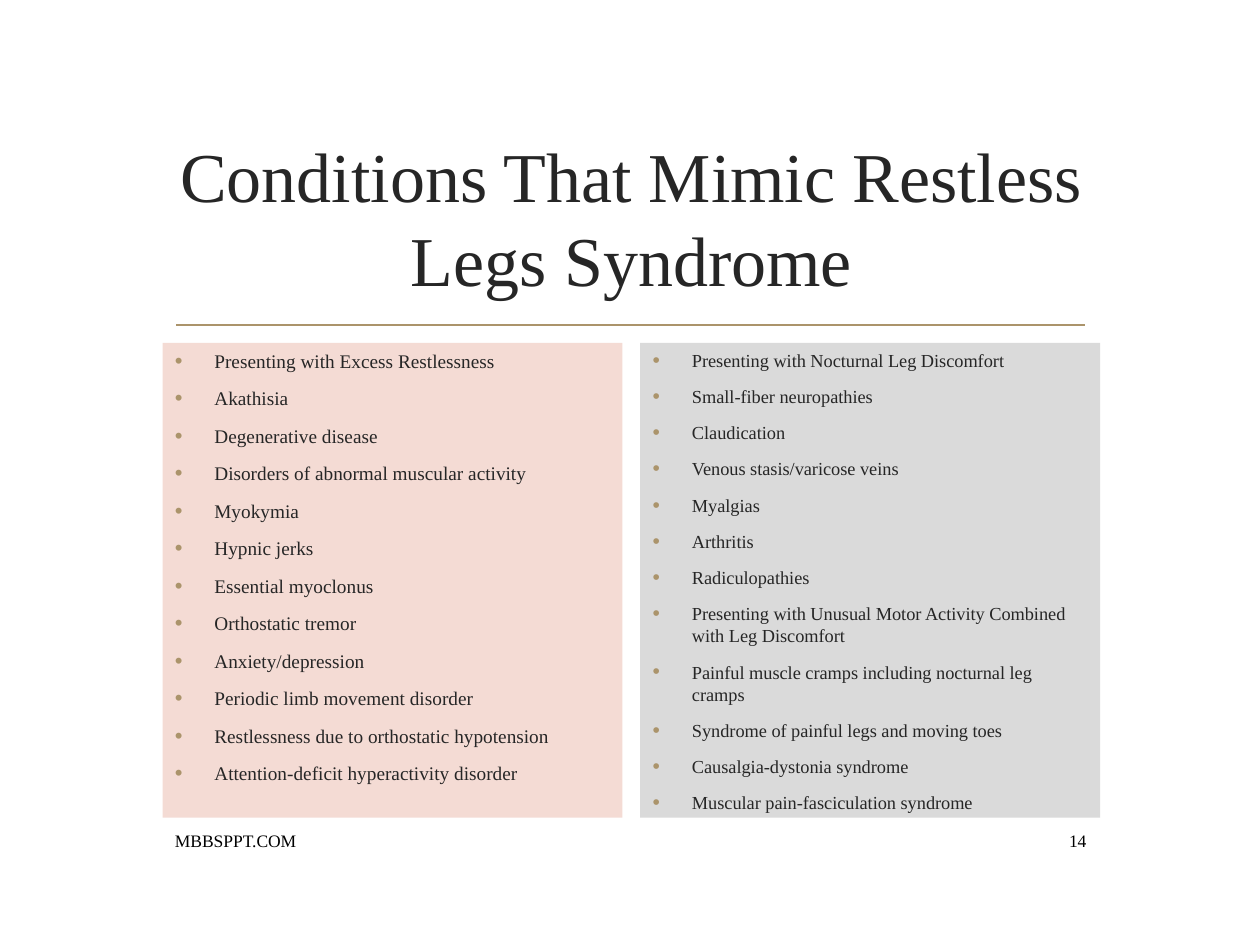
from lxml import etree
from pptx import Presentation
from pptx.dml.color import RGBColor
from pptx.enum.shapes import MSO_CONNECTOR as Connector, MSO_SHAPE as Shape
from pptx.enum.text import MSO_ANCHOR as Anchor, PP_ALIGN as Align
from pptx.oxml.ns import qn
from pptx.util import Pt

COLORS = {
    "ink": "262626",
    "footer": "000000",
    "gold": "AB946B",
    "rose": "F4DBD4",
    "grey": "DADADA",
}
FONT = "Times New Roman"
LEFT, WIDTH = 92.9, 535.7
COLUMN_WIDTH, COLUMN_STEP = 262.8, 272.9

RESTLESSNESS = [
    "Presenting with Excess Restlessness",
    "Akathisia",
    "Degenerative disease",
    "Disorders of abnormal muscular activity",
    "Myokymia",
    "Hypnic jerks",
    "Essential myoclonus",
    "Orthostatic tremor",
    "Anxiety/depression",
    "Periodic limb movement disorder",
    "Restlessness due to orthostatic hypotension",
    "Attention-deficit hyperactivity disorder",
]
LEG_DISCOMFORT = [
    "Presenting with Nocturnal Leg Discomfort",
    "Small-fiber neuropathies",
    "Claudication",
    "Venous stasis/varicose veins",
    "Myalgias",
    "Arthritis",
    "Radiculopathies",
    "Presenting with Unusual Motor Activity Combined with Leg Discomfort",
    "Painful muscle cramps including nocturnal leg cramps",
    "Syndrome of painful legs and moving toes",
    "Causalgia-dystonia syndrome",
    "Muscular pain-fasciculation syndrome",
]


def rgb(name):
    return RGBColor.from_string(COLORS[name])


def style(paragraph, size, color, align=Align.LEFT):
    paragraph.alignment = align
    paragraph.font.name = FONT
    paragraph.font.size = Pt(size)
    paragraph.font.color.rgb = rgb(color)


def add_bullet(paragraph):
    props = paragraph._p.get_or_add_pPr()
    props.set("marL", str(Pt(22.5)))
    props.set("indent", str(-Pt(22.5)))
    color = etree.SubElement(props, qn("a:buClr"))
    etree.SubElement(color, qn("a:srgbClr"), val=COLORS["gold"])
    etree.SubElement(props, qn("a:buSzPct"), val="115000")
    etree.SubElement(props, qn("a:buFont"), typeface="Arial")
    etree.SubElement(props, qn("a:buChar"), char="•")


def place_title(slide, left, top, width, height):
    title = slide.shapes.title
    title.left, title.top, title.width, title.height = map(Pt, (left, top, width, height))
    frame = title.text_frame
    frame.text = "Conditions That Mimic Restless Legs Syndrome"
    frame.word_wrap = True
    frame.vertical_anchor = Anchor.MIDDLE
    style(frame.paragraphs[0], 40, "ink", Align.CENTER)


def add_rule(slide, left, top, width):
    rule = slide.shapes.add_connector(
        Connector.STRAIGHT, Pt(left), Pt(top), Pt(left + width), Pt(top))
    rule.line.color.rgb = rgb("gold")
    rule.line.width = Pt(1.25)
    etree.SubElement(rule._element.spPr, qn("a:effectLst"))


def add_conditions(slide, left, top, width, height, conditions, fill, size):
    panel = slide.shapes.add_shape(
        Shape.RECTANGLE, Pt(left), Pt(top), Pt(width), Pt(height))
    panel.shadow.inherit = False
    panel.fill.solid()
    panel.fill.fore_color.rgb = rgb(fill)
    panel.line.fill.background()
    frame = panel.text_frame
    frame.word_wrap = True
    frame.vertical_anchor = Anchor.TOP
    for index, condition in enumerate(conditions):
        item = frame.paragraphs[0] if index == 0 else frame.add_paragraph()
        item.text = condition
        add_bullet(item)
        item.space_before = Pt(0.2 * size if index else 0)
        item.space_after = Pt(6)
        style(item, size, "ink")


def add_footer(slide, left, top, width, height, text, align):
    box = slide.shapes.add_textbox(Pt(left), Pt(top), Pt(width), Pt(height))
    frame = box.text_frame
    frame.word_wrap = True
    frame.vertical_anchor = Anchor.MIDDLE
    frame.text = text
    style(frame.paragraphs[0], 10, "footer", align)


def main():
    deck = Presentation()
    deck.slide_width, deck.slide_height = Pt(720), Pt(540)
    slide = deck.slides.add_slide(deck.slide_layouts[5])
    add_rule(slide, 100.6, 185.8, 519.4)
    place_title(slide, LEFT, 72, WIDTH, 103)
    columns = [(RESTLESSNESS, "rose", 11), (LEG_DISCOMFORT, "grey", 10.5)]
    for index, (conditions, fill, size) in enumerate(columns):
        add_conditions(slide, LEFT + index * COLUMN_STEP, 195.9, COLUMN_WIDTH, 271.4,
                       conditions, fill, size)
    add_footer(slide, LEFT, 469.4, 401.8, 22.3, "MBBSPPT.COM", Align.LEFT)
    add_footer(slide, 596.9, 469.4, 31, 22.3, "14", Align.RIGHT)
    deck.save("out.pptx")


if __name__ == "__main__":
    main()
